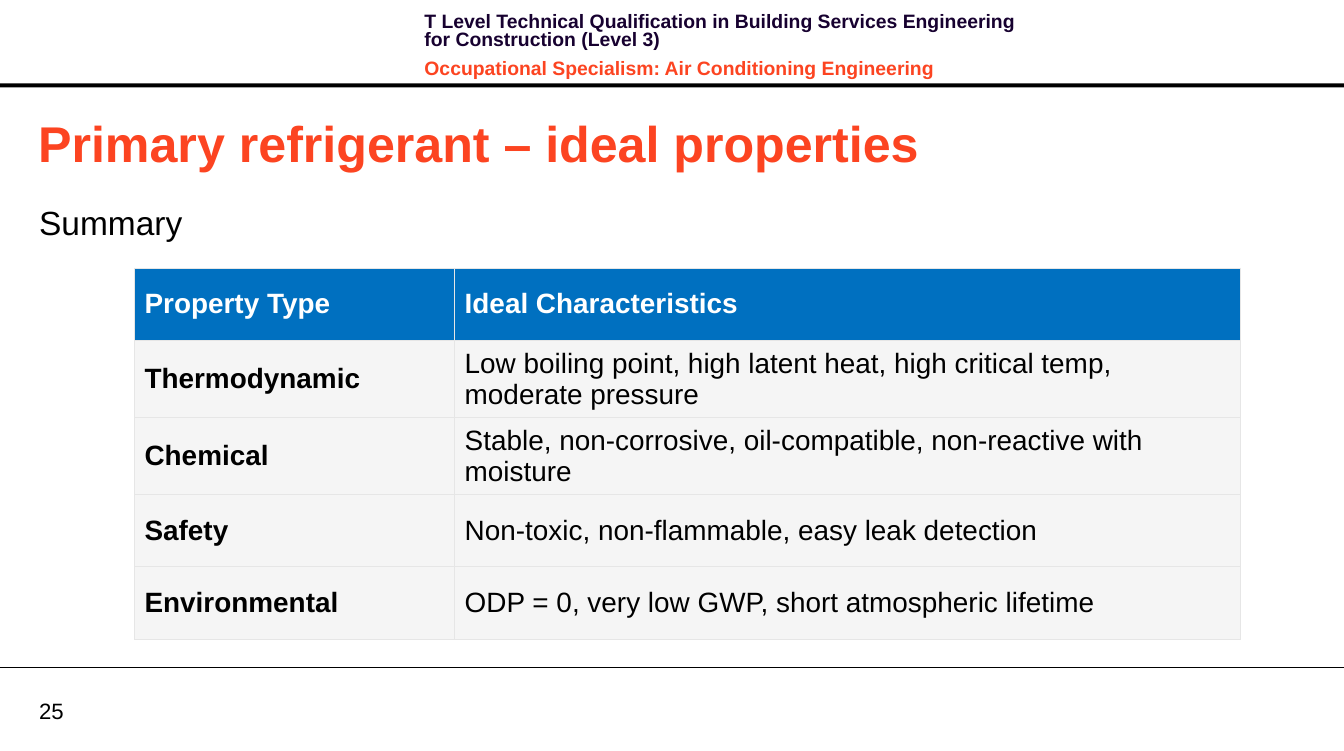
from lxml import etree
from pptx import Presentation
from pptx.dml.color import RGBColor
from pptx.enum.shapes import MSO_CONNECTOR, MSO_SHAPE
from pptx.enum.text import MSO_ANCHOR, MSO_AUTO_SIZE, PP_ALIGN
from pptx.oxml.ns import qn
from pptx.util import Inches, Pt

LINE = MSO_CONNECTOR.STRAIGHT
RECT = MSO_SHAPE.RECTANGLE
MIDDLE = MSO_ANCHOR.MIDDLE
FIXED = MSO_AUTO_SIZE.NONE
LEFT = PP_ALIGN.LEFT

COLORS = {
    "black": "000000", "white": "FFFFFF", "navy": "170130", "orange": "FC4421",
    "blue": "0070C0", "pale": "F5F5F5", "border": "E6E6E6",
}
WIDTH, HEIGHT = 13.39, 7.48


def add_run(para, text, size, color, bold=False):
    run = para.add_run()
    run.text = text
    font = run.font
    font.name = "Arial"
    font.size = Pt(size)
    font.bold = bold
    font.color.rgb = RGBColor.from_string(COLORS[color])


def add_box(x, y, w, h, inset=0):
    box = slide.shapes.add_textbox(Inches(x), Inches(y), Inches(w), Inches(h))
    frame = box.text_frame
    frame.word_wrap = True
    frame.margin_left = frame.margin_right = Inches(inset)
    frame.margin_top = frame.margin_bottom = Inches(inset / 2)
    return frame


prs = Presentation()
prs.slide_width, prs.slide_height = Inches(WIDTH), Inches(HEIGHT)
slide = prs.slides.add_slide(prs.slide_layouts[5])

# Header bar and footer rule
bar = slide.shapes.add_shape(RECT, 0, Inches(0.83), Inches(WIDTH), Inches(0.04))
bar.shadow.inherit = False
bar.fill.solid()
bar.fill.fore_color.rgb = RGBColor.from_string(COLORS["black"])
bar.line.fill.background()

rule = slide.shapes.add_connector(LINE, 0, Inches(6.65), Inches(WIDTH), Inches(6.65))
rule.line.color.rgb = RGBColor.from_string(COLORS["black"])
rule.line.width = Pt(0.75)
etree.SubElement(rule._element.spPr, qn("a:effectLst"))

# Course header
HEADER = [
    ("T Level Technical Qualification in Building Services Engineering "
     "for Construction (Level 3)", "navy", 0),
    ("Occupational Specialism: Air Conditioning Engineering", "orange", 4),
]
frame = add_box(4.13, 0.09, 6.32, 0.64, 0.1)
for i, (text, color, before) in enumerate(HEADER):
    para = frame.add_paragraph() if i else frame.paragraphs[0]
    para.line_spacing = Pt(13)
    para.space_before = Pt(before)
    para.space_after = Pt(4)
    add_run(para, text, 13.9, color, True)

# Page number
frame = add_box(0.39, 6.94, 0.64, 0.27)
frame.vertical_anchor = MIDDLE
add_run(frame.paragraphs[0], "25", 15.9, "black")

# Title
title = slide.shapes.title
title.left, title.top = Inches(0.28), Inches(1.06)
title.width, title.height = Inches(11.47), Inches(0.71)
frame = title.text_frame
frame.auto_size = FIXED
frame.vertical_anchor = MIDDLE
frame.paragraphs[0].alignment = LEFT
add_run(frame.paragraphs[0], "Primary refrigerant – ideal properties", 36, "orange", True)

# Lead-in
para = add_box(0.39, 1.97, 12.75, 0.6).paragraphs[0]
para.line_spacing = 1.1
add_run(para, "Summary", 24, "black")

# Properties table
ROWS = [
    ("Property Type", "Ideal Characteristics"),
    ("Thermodynamic",
     "Low boiling point, high latent heat, high critical temp, moderate pressure"),
    ("Chemical", "Stable, non‑corrosive, oil‑compatible, non‑reactive with moisture"),
    ("Safety", "Non‑toxic, non‑flammable, easy leak detection"),
    ("Environmental", "ODP = 0, very low GWP, short atmospheric lifetime"),
]
COLS = [3.19, 7.83]
ROW = 0.72
table = slide.shapes.add_table(
    len(ROWS), len(COLS), Inches(1.34), Inches(2.67),
    Inches(sum(COLS)), Inches(ROW * len(ROWS))).table
table.horz_banding = False
for col, width in zip(table.columns, COLS):
    col.width = Inches(width)
for r, texts in enumerate(ROWS):
    table.rows[r].height = Inches(ROW)
    head = r == 0
    for c, text in enumerate(texts):
        cell = table.cell(r, c)
        cell.vertical_anchor = MIDDLE
        add_run(cell.text_frame.paragraphs[0], text, 20,
                "white" if head else "black", head or c == 0)
        # Borders come before the fill in the cell properties
        props = cell._tc.get_or_add_tcPr()
        for side in ("lnL", "lnR", "lnT", "lnB"):
            edge = etree.SubElement(props, qn("a:" + side), w=str(Pt(0.5)))
            fill = etree.SubElement(edge, qn("a:solidFill"))
            etree.SubElement(fill, qn("a:srgbClr"), val=COLORS["border"])
        cell.fill.solid()
        cell.fill.fore_color.rgb = RGBColor.from_string(COLORS["blue" if head else "pale"])

prs.save("out.pptx")
